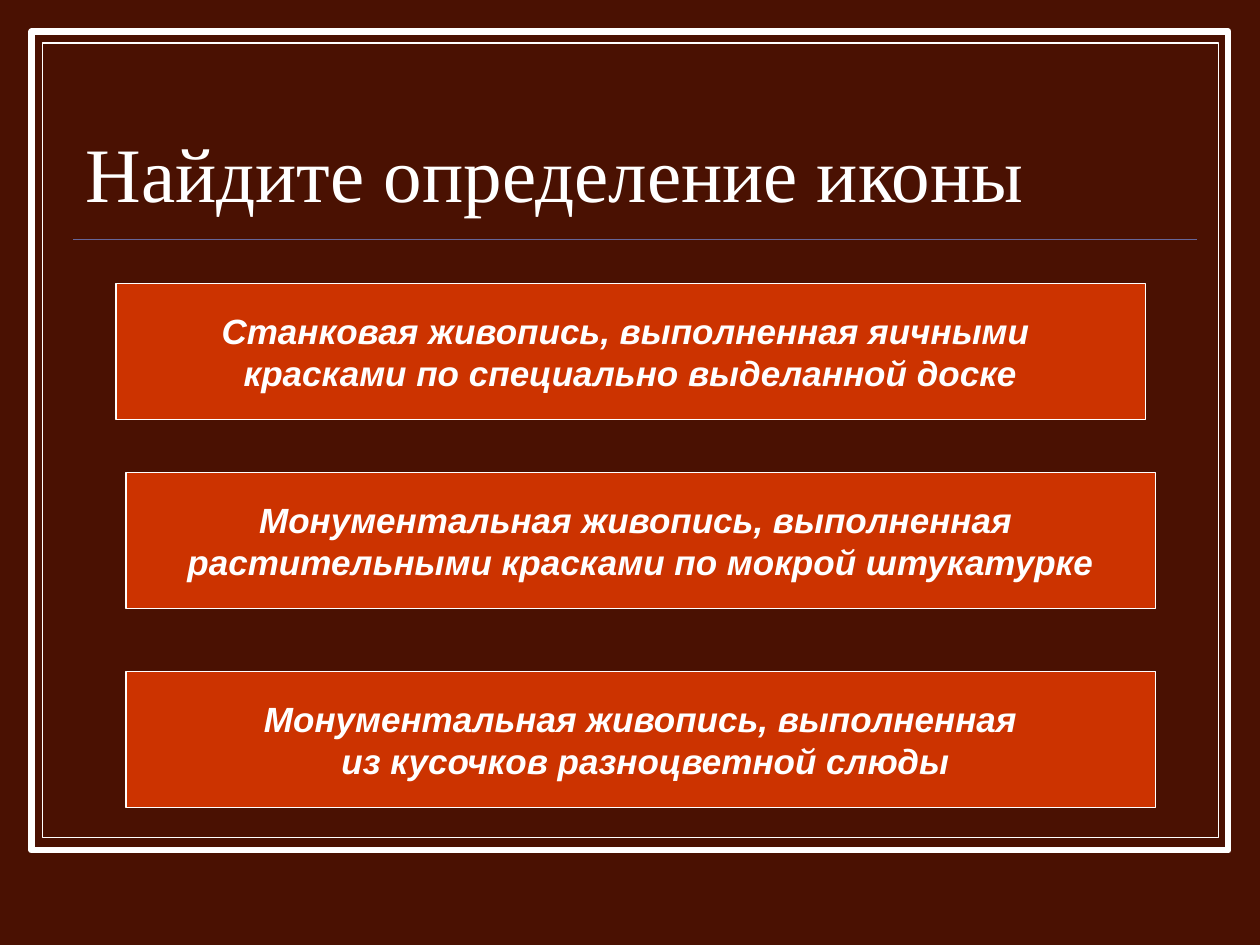
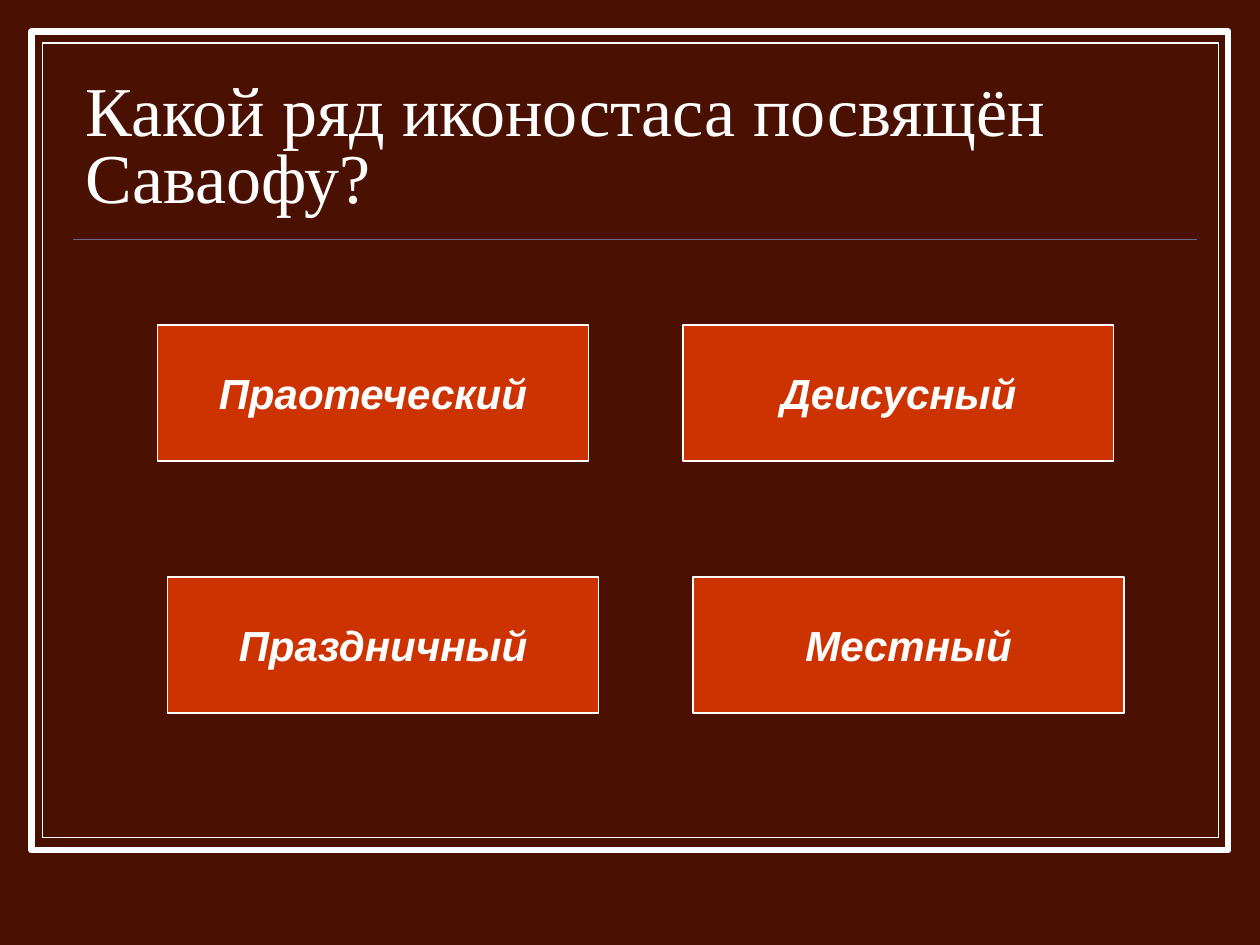
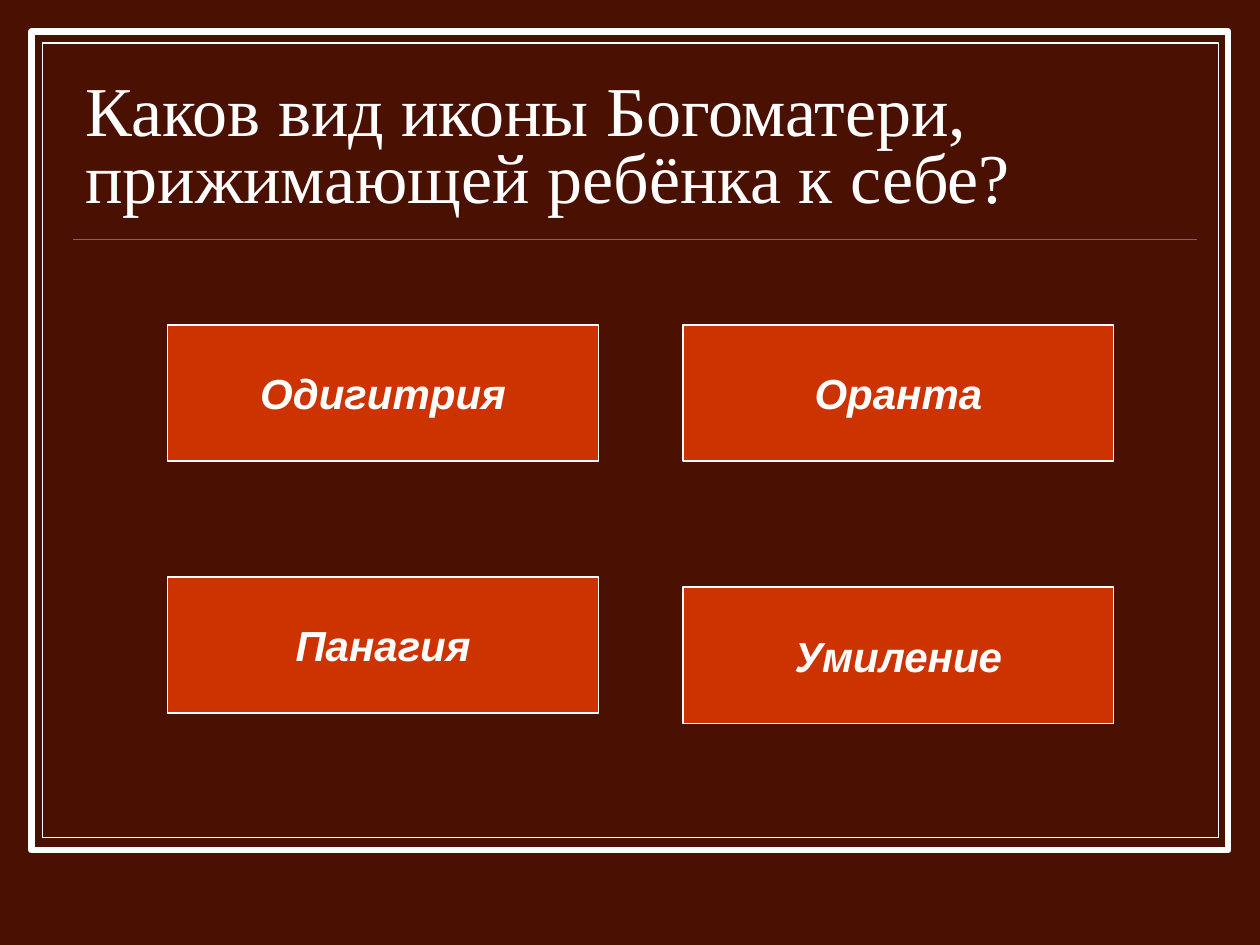
from dataclasses import dataclass

from lxml.etree import SubElement
from pptx import Presentation
from pptx.dml.color import RGBColor
from pptx.enum.shapes import MSO_CONNECTOR, MSO_SHAPE
from pptx.enum.text import MSO_ANCHOR, PP_ALIGN
from pptx.oxml.ns import qn
from pptx.slide import Slide
from pptx.util import Inches, Pt


@dataclass(frozen=True)
class Theme:
    background: RGBColor = RGBColor(0x4A, 0x11, 0x02)
    answer: RGBColor = RGBColor(0xCC, 0x33, 0x00)
    light: RGBColor = RGBColor(0xFF, 0xFF, 0xFF)
    rule: RGBColor = RGBColor(0x66, 0x66, 0x99)
    title_font: str = "Times New Roman"
    answer_font: str = "Arial"
    title_large: int = 44
    title_small: int = 40
    answer_long: int = 20
    answer_short: int = 24
    thick_line: float = 3.5
    thin_line: float = 0.75
    rule_line: float = 1


@dataclass(frozen=True)
class Box:
    left: float
    top: float
    width: float
    height: float

    def emu(self) -> tuple[int, int, int, int]:
        return (Inches(self.left), Inches(self.top),
                Inches(self.width), Inches(self.height))


@dataclass(frozen=True)
class Answer:
    left: float
    top: float
    lines: tuple[str, ...]


@dataclass(frozen=True)
class Question:
    title: str
    title_size: int
    answer_width: float
    answer_size: int
    answers: tuple[Answer, ...]


THEME = Theme()
OUTER_FRAME = Box(0.25, 0.25, 9.5, 6.5)
INNER_FRAME = Box(0.34, 0.34, 9.33, 6.31)
TITLE = Box(0.58, 0.52, 8.92, 1.25)
RULE_Y = 1.9
ANSWER_HEIGHT = 1.08
LONG_WIDTH = 8.17
SHORT_WIDTH = 3.42
LEFT_COLUMN, RIGHT_COLUMN = 1.33, 5.42
TOP_ROW, BOTTOM_ROW = 2.58, 4.58
NUDGE = 0.08

QUESTIONS = (
    Question("Найдите определение иконы", THEME.title_large,
             LONG_WIDTH, THEME.answer_long, (
                 Answer(1 - NUDGE, 2.25, (
                     "Станковая живопись, выполненная яичными ",
                     "красками по специально выделанной доске")),
                 Answer(1, 3.75, (
                     "Монументальная живопись, выполненная ",
                     "растительными красками по мокрой штукатурке")),
                 Answer(1, 5.33, (
                     "Монументальная живопись, выполненная",
                     " из кусочков разноцветной слюды")),
             )),
    Question("Какой ряд иконостаса посвящён Саваофу?", THEME.title_small,
             SHORT_WIDTH, THEME.answer_short, (
                 Answer(LEFT_COLUMN - NUDGE, TOP_ROW, ("Праотеческий",)),
                 Answer(RIGHT_COLUMN, TOP_ROW, ("Деисусный",)),
                 Answer(LEFT_COLUMN, BOTTOM_ROW, ("Праздничный",)),
                 Answer(RIGHT_COLUMN + NUDGE, BOTTOM_ROW, ("Местный",)),
             )),
    Question("Каков вид иконы Богоматери, прижимающей ребёнка к себе?",
             THEME.title_small, SHORT_WIDTH, THEME.answer_short, (
                 Answer(LEFT_COLUMN, TOP_ROW, ("Одигитрия",)),
                 Answer(RIGHT_COLUMN, TOP_ROW, ("Оранта",)),
                 Answer(LEFT_COLUMN, BOTTOM_ROW, ("Панагия",)),
                 Answer(RIGHT_COLUMN, BOTTOM_ROW + NUDGE, ("Умиление",)),
             )),
)


def add_rect(s: Slide, box: Box, fill: RGBColor, line_width: float):
    sp = s.shapes.add_shape(MSO_SHAPE.RECTANGLE, *box.emu())
    sp.shadow.inherit = False
    sp.fill.solid()
    sp.fill.fore_color.rgb = fill
    sp.line.color.rgb = THEME.light
    sp.line.width = Pt(line_width)
    return sp


def add_frame(s: Slide) -> None:
    add_rect(s, OUTER_FRAME, THEME.background, THEME.thick_line)
    add_rect(s, INNER_FRAME, THEME.background, THEME.thin_line)
    rule = s.shapes.add_connector(
        MSO_CONNECTOR.STRAIGHT, Inches(TITLE.left), Inches(RULE_Y),
        Inches(TITLE.left + TITLE.width), Inches(RULE_Y))
    rule.line.color.rgb = THEME.rule
    rule.line.width = Pt(THEME.rule_line)
    SubElement(rule._element.spPr, qn("a:effectLst"))


def style_paragraph(p, font: str, size: int) -> None:
    p.font.name = font
    p.font.size = Pt(size)
    p.font.color.rgb = THEME.light


def add_title(s: Slide, text: str, size: int) -> None:
    tf = s.shapes.add_textbox(*TITLE.emu()).text_frame
    tf.word_wrap = True
    tf.vertical_anchor = MSO_ANCHOR.BOTTOM
    p = tf.paragraphs[0]
    p.text = text
    p.line_spacing = 0.8
    style_paragraph(p, THEME.title_font, size)


def add_answer(s: Slide, answer: Answer, width: float, size: int) -> None:
    box = Box(answer.left, answer.top, width, ANSWER_HEIGHT)
    tf = add_rect(s, box, THEME.answer, THEME.thin_line).text_frame
    tf.word_wrap = False
    tf.vertical_anchor = MSO_ANCHOR.MIDDLE
    tf.text = "\n".join(answer.lines)
    for p in tf.paragraphs:
        p.alignment = PP_ALIGN.CENTER
        style_paragraph(p, THEME.answer_font, size)
        p.font.bold = True
        p.font.italic = True


def main() -> None:
    prs = Presentation()
    prs.slide_width = Inches(10)
    prs.slide_height = Inches(7.5)
    background = prs.slide_master.background.fill
    background.solid()
    background.fore_color.rgb = THEME.background
    for question in QUESTIONS:
        s = prs.slides.add_slide(prs.slide_layouts[6])
        add_frame(s)
        add_title(s, question.title, question.title_size)
        for answer in question.answers:
            add_answer(s, answer, question.answer_width, question.answer_size)
    prs.save("out.pptx")


if __name__ == "__main__":
    main()
